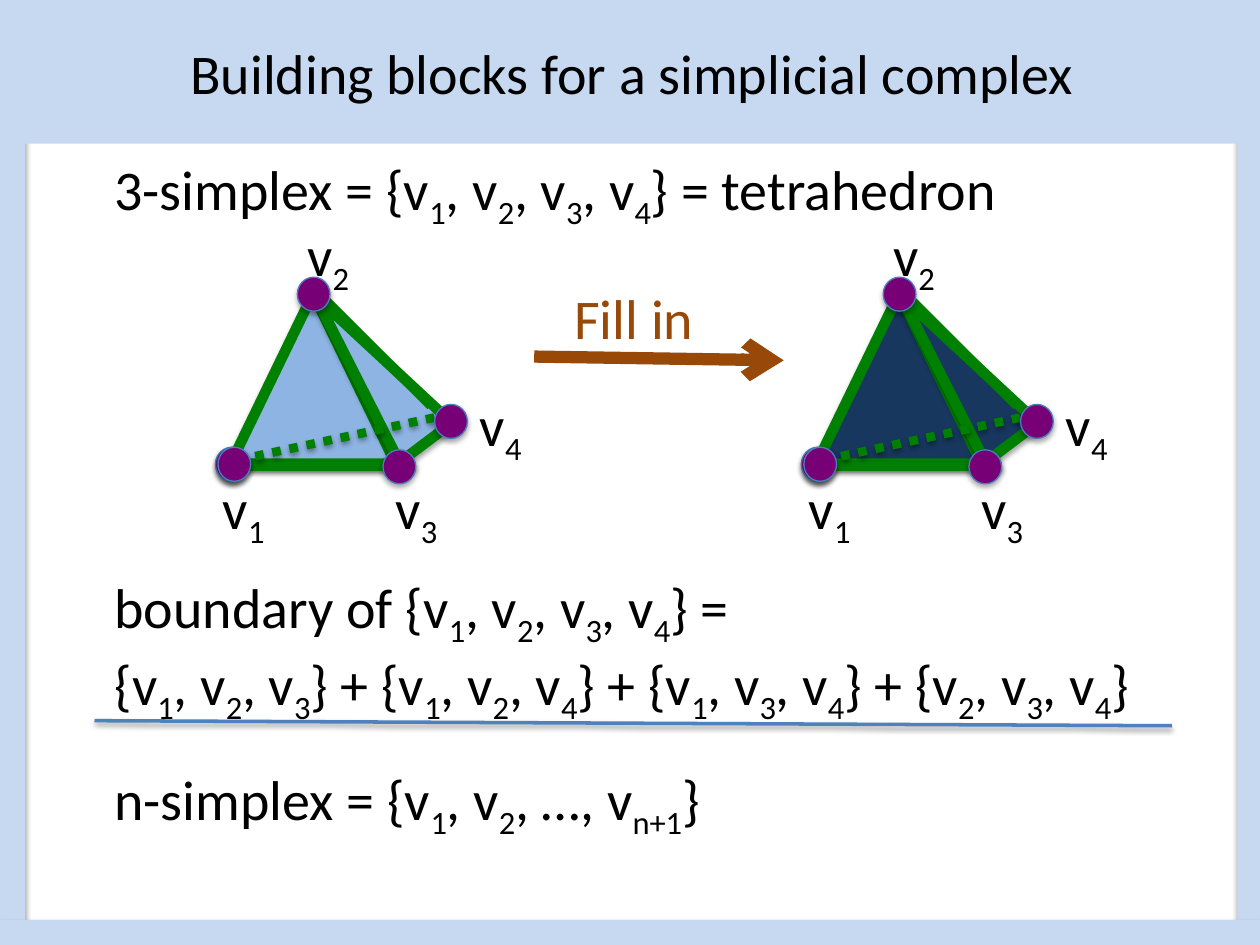
from lxml import etree
from pptx import Presentation
from pptx.dml.color import RGBColor
from pptx.enum.dml import MSO_LINE
from pptx.enum.shapes import MSO_CONNECTOR, MSO_SHAPE
from pptx.enum.text import MSO_ANCHOR, PP_ALIGN
from pptx.oxml.ns import qn
from pptx.util import Inches, Pt

RECT, OVAL = MSO_SHAPE.RECTANGLE, MSO_SHAPE.OVAL
TRIANGLE = MSO_SHAPE.ISOSCELES_TRIANGLE
STRAIGHT = MSO_CONNECTOR.STRAIGHT
DOTTED = MSO_LINE.ROUND_DOT
CENTER, MIDDLE = PP_ALIGN.CENTER, MSO_ANCHOR.MIDDLE

COLORS = {
    "text": "000000", "frame": "C6D9F1", "edge": "008000",
    "vertex": "770077", "rim": "4B7EBC", "hollow": "8EB4E3",
    "solid": "17375E", "rule": "4F81BD", "arrow": "984807",
}
FONT, SIZE = "Calibri", 32
SHAPE_SHADOW = (35, 1.8)   # opacity in percent, distance in points
LINE_SHADOW = (38, 1.6)


def rgb(name):
    return RGBColor.from_string(COLORS[name])


class SlideBuilder:
    """Draws styled elements on the slide or in the current group."""

    def __init__(self, slide):
        self.slide = slide
        self.shapes = slide.shapes

    def open_group(self):
        self.shapes = self.slide.shapes.add_group_shape().shapes

    def close_group(self):
        self.shapes = self.slide.shapes

    def shadow(self, s, style):
        """Set a downward shadow, or none when style is None."""
        effects = etree.SubElement(s._element.spPr, qn("a:effectLst"))
        if style:
            opacity, distance = style
            outer = etree.SubElement(
                effects, qn("a:outerShdw"), blurRad=str(Pt(3.1)),
                dist=str(Pt(distance)), dir="5400000", rotWithShape="0")
            color = etree.SubElement(outer, qn("a:srgbClr"), val="000000")
            etree.SubElement(color, qn("a:alpha"), val=str(opacity * 1000))

    def shape(self, kind, x, y, w, h, fill, line=None, width=0,
              rotation=0, shadow=SHAPE_SHADOW):
        s = self.shapes.add_shape(kind, Inches(x), Inches(y), Inches(w), Inches(h))
        s.rotation = rotation
        s.fill.solid()
        s.fill.fore_color.rgb = rgb(fill)
        if line:
            s.line.color.rgb = rgb(line)
            s.line.width = Pt(width)
        else:
            s.line.fill.background()
        self.shadow(s, shadow)
        return s

    def line(self, x1, y1, x2, y2, color, width, dash=None, arrow=False,
             shadow=LINE_SHADOW):
        s = self.shapes.add_connector(
            STRAIGHT, Inches(x1), Inches(y1), Inches(x2), Inches(y2))
        s.line.color.rgb = rgb(color)
        s.line.width = Pt(width)
        if dash:
            s.line.dash_style = dash
        if arrow:
            ln = s._element.spPr.find(qn("a:ln"))
            etree.SubElement(ln, qn("a:tailEnd"), type="arrow")
        self.shadow(s, shadow)

    def add_runs(self, p, text, color="text"):
        """Add runs; every second part between ~ marks is a subscript."""
        for i, part in enumerate(text.split("~")):
            if not part:
                continue
            r = p.add_run()
            r.text = part
            r.font.name, r.font.size = FONT, Pt(SIZE)
            r.font.color.rgb = rgb(color)
            if i % 2:
                r._r.get_or_add_rPr().set("baseline", "-25000")

    def text(self, x, y, w, h, lines, color="text"):
        """Add a text box from (text, space before) pairs."""
        tf = self.shapes.add_textbox(
            Inches(x), Inches(y), Inches(w), Inches(h)).text_frame
        tf.word_wrap = True
        for i, (line, space) in enumerate(lines):
            p = tf.add_paragraph() if i else tf.paragraphs[0]
            p.space_before = Pt(space)
            self.add_runs(p, line, color)

    def vertex(self, x, y):
        self.shape(OVAL, x, y, 0.26, 0.27, "vertex", "rim", 0.75)

    def tetrahedron(self, x, fill):
        """Draw a labelled tetrahedron, x being the left of its front face."""
        self.open_group()
        # Faces and solid edges
        self.shape(TRIANGLE, x, 2.33, 1.31, 1.35, fill, "edge", 6)
        self.shape(TRIANGLE, x + 0.85, 2.2, 0.52, 1.46, fill, "edge", 6, 323)
        self.line(x + 0.71, 2.34, x + 1.59, 3.22, "edge", 5.5, shadow=None)
        self.line(x + 1.47, 3.7, x + 0.13, 3.7, "edge", 5)
        # Vertices, with the hidden edge between them
        for dx, y in ((1.21, 3.57), (-0.11, 3.55), (0.53, 2.2), (-0.12, 3.55)):
            self.vertex(x + dx, y)
        self.line(x + 0.06, 3.65, x + 1.73, 3.29, "edge", 5, DOTTED)
        for dx, y in ((-0.1, 3.55), (1.62, 3.21)):
            self.vertex(x + dx, y)
        # Labels
        for n, dx, y in ((4, 1.88, 3.05), (3, 1.21, 3.71),
                         (1, -0.16, 3.71), (2, 0.51, 1.7)):
            self.text(x + dx, y, 0.63, 0.57, [(f"v~{n}~", 0)])
        self.close_group()

    def title(self, text):
        s = self.shape(RECT, 0.02, 0, 10, 1.14, "frame", shadow=None)
        tf = s.text_frame
        tf.word_wrap = True
        tf.vertical_anchor = MIDDLE
        p = tf.paragraphs[0]
        p.alignment = CENTER
        self.add_runs(p, text)


def simplex(*indices):
    return "{" + ", ".join(f"v~{i}~" for i in indices) + "}"


def main():
    prs = Presentation()
    prs.slide_width, prs.slide_height = Inches(10), Inches(7.5)
    b = SlideBuilder(prs.slides.add_slide(prs.slide_layouts[6]))

    # Definitions, with room left for the drawings
    faces = ((1, 2, 3), (1, 2, 4), (1, 3, 4), (2, 3, 4))
    whole = simplex(1, 2, 3, 4)
    b.text(0.81, 1.18, 8.55, 5.76, [
        (f"3-simplex = {whole} = tetrahedron", 0),
        (f"boundary of {whole} =", 195),
        (" + ".join(simplex(*face) for face in faces), 0),
        ("n-simplex = {v~1~, v~2~, …, v~n+1~}", 22),
    ])

    b.tetrahedron(6.48, "solid")
    b.line(0.75, 5.72, 9.3, 5.76, "rule", 2)

    # Frame and title
    b.open_group()
    for x in (0, 9.82):
        b.shape(RECT, x, 0, 0.2, 7.5, "frame")
    b.shape(RECT, 0, 0, 10, 0.2, "frame", shadow=None)
    b.shape(RECT, 0, 7.3, 10, 0.2, "frame")
    b.close_group()
    b.title("Building blocks for a simplicial complex")

    b.tetrahedron(1.83, "hollow")

    # Arrow from the hollow to the solid tetrahedron
    b.open_group()
    b.line(4.24, 2.83, 6.22, 2.86, "arrow", 7, arrow=True, shadow=None)
    b.text(4.46, 2.2, 1.34, 0.64, [("Fill in", 0)], "arrow")
    b.close_group()

    prs.save("out.pptx")


if __name__ == "__main__":
    main()
